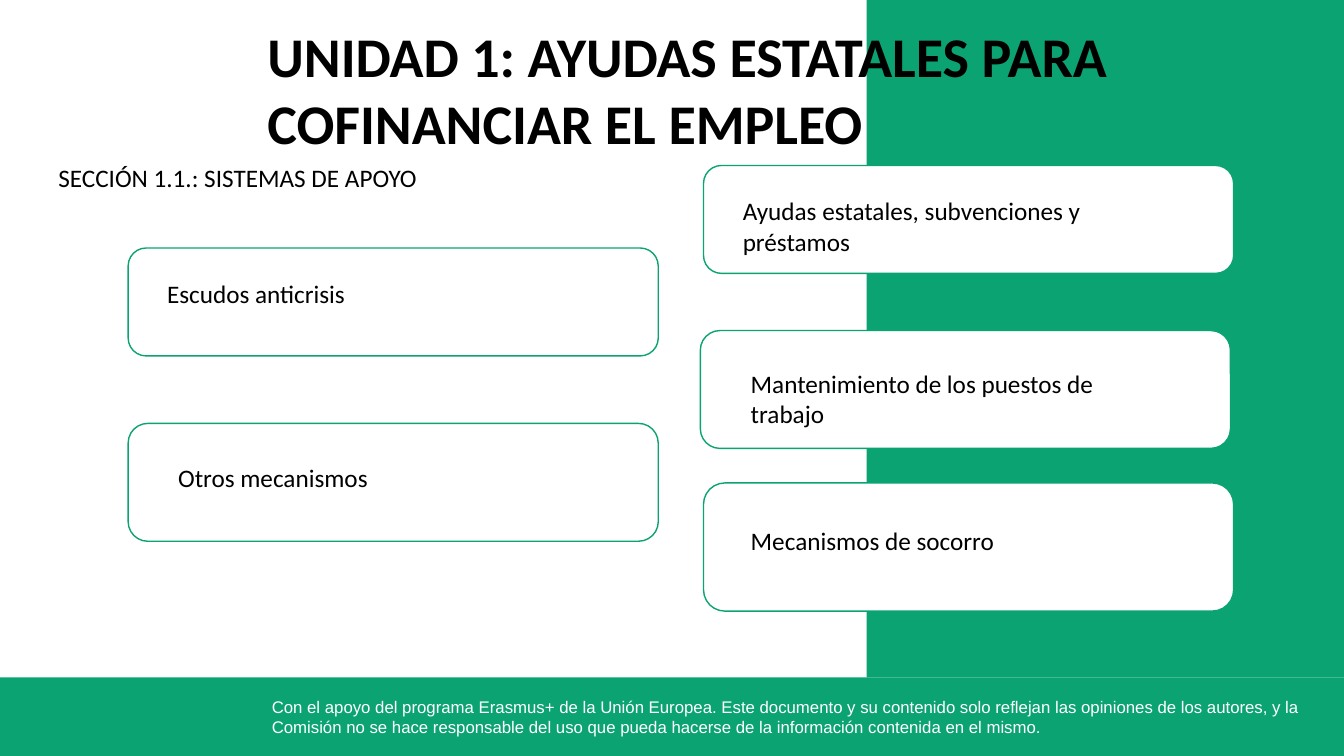
import pptx
import pptx.dml.color
import pptx.enum.shapes
import pptx.enum.text
import pptx.util

Cm = pptx.util.Cm
SHAPES = pptx.enum.shapes.MSO_SHAPE

COLORS = {"green": "0CA373", "white": "FFFFFF", "black": "000000"}
SLIDE_WIDTH, SLIDE_HEIGHT = 33.87, 19.05
FOOTER_TOP = 17.07
PANEL_LEFT = 21.84
CARD_WIDTH = 13.36
LABEL_WIDTH, LABEL_HEIGHT = 9.83, 1.02

# Card left, top, height; label left, top; label text
MECHANISMS = [
    (17.73, 4.17, 2.72, 18.47, 4.8, "Ayudas estatales, subvenciones y préstamos"),
    (17.65, 8.33, 2.97, 18.67, 9.14, "Mantenimiento de los puestos de trabajo"),
    (17.73, 12.17, 3.23, 18.67, 13.11, "Mecanismos de socorro"),
    (3.23, 6.25, 2.72, 3.96, 6.88, "Escudos anticrisis"),
    (3.23, 10.67, 2.97, 4.24, 11.51, "Otros mecanismos"),
]


def color(name):
    return pptx.dml.color.RGBColor.from_string(COLORS[name])


def add_block(slide, preset, left, top, width, height, fill, outline=None):
    block = slide.shapes.add_shape(preset, Cm(left), Cm(top), Cm(width), Cm(height))
    block.shadow.inherit = False
    block.fill.solid()
    block.fill.fore_color.rgb = color(fill)
    if outline:
        block.line.color.rgb = color(outline)
        block.line.width = pptx.util.Pt(1)
    else:
        block.line.fill.background()


def add_text(slide, text, left, top, width, height, *, size=18, font="Calibri",
             ink="black", bold=False, margins=(0.25, 0.13, 0.25, 0.13)):
    box = slide.shapes.add_textbox(Cm(left), Cm(top), Cm(width), Cm(height))
    frame = box.text_frame
    frame.word_wrap = True
    frame.auto_size = pptx.enum.text.MSO_AUTO_SIZE.SHAPE_TO_FIT_TEXT
    (frame.margin_left, frame.margin_top,
     frame.margin_right, frame.margin_bottom) = map(Cm, margins)
    run = frame.paragraphs[0].add_run()
    run.text = text
    run.font.size = pptx.util.Pt(size)
    run.font.name = font
    run.font.bold = bold
    run.font.color.rgb = color(ink)


def main():
    deck = pptx.Presentation()
    deck.slide_width, deck.slide_height = Cm(SLIDE_WIDTH), Cm(SLIDE_HEIGHT)
    slide = deck.slides.add_slide(deck.slide_layouts[6])

    # Footer band with the funding notice
    add_block(slide, SHAPES.RECTANGLE, 0, FOOTER_TOP,
              SLIDE_WIDTH, SLIDE_HEIGHT - FOOTER_TOP, "green")
    add_text(slide, "Con el apoyo del programa Erasmus+ de la Unión Europea. "
             "Este documento y su contenido solo reflejan las opiniones de los autores, "
             "y la Comisión no se hace responsable del uso que pueda hacerse de la "
             "información contenida en el mismo.",
             6.6, 17.42, 26.47, 1.27, size=12, font="Arial", ink="white")

    # Side panel
    add_block(slide, SHAPES.RECTANGLE, PANEL_LEFT, 0,
              SLIDE_WIDTH - PANEL_LEFT, FOOTER_TOP, "green")

    # Unit title and section heading
    add_text(slide, "UNIDAD 1: AYUDAS ESTATALES PARA COFINANCIAR EL EMPLEO",
             6.71, 0.48, 22.81, 1.75, size=40, bold=True, margins=(0.03, 0.06, 0, 0))
    add_text(slide, "SECCIÓN 1.1.: SISTEMAS DE APOYO", 1.22, 3.95, 16.92, LABEL_HEIGHT)

    # Support mechanism cards
    for left, top, height, label_left, label_top, label in MECHANISMS:
        add_block(slide, SHAPES.ROUNDED_RECTANGLE, left, top, CARD_WIDTH, height,
                  "white", outline="green")
        add_text(slide, label, label_left, label_top, LABEL_WIDTH, LABEL_HEIGHT)

    deck.save("out.pptx")


if __name__ == "__main__":
    main()
